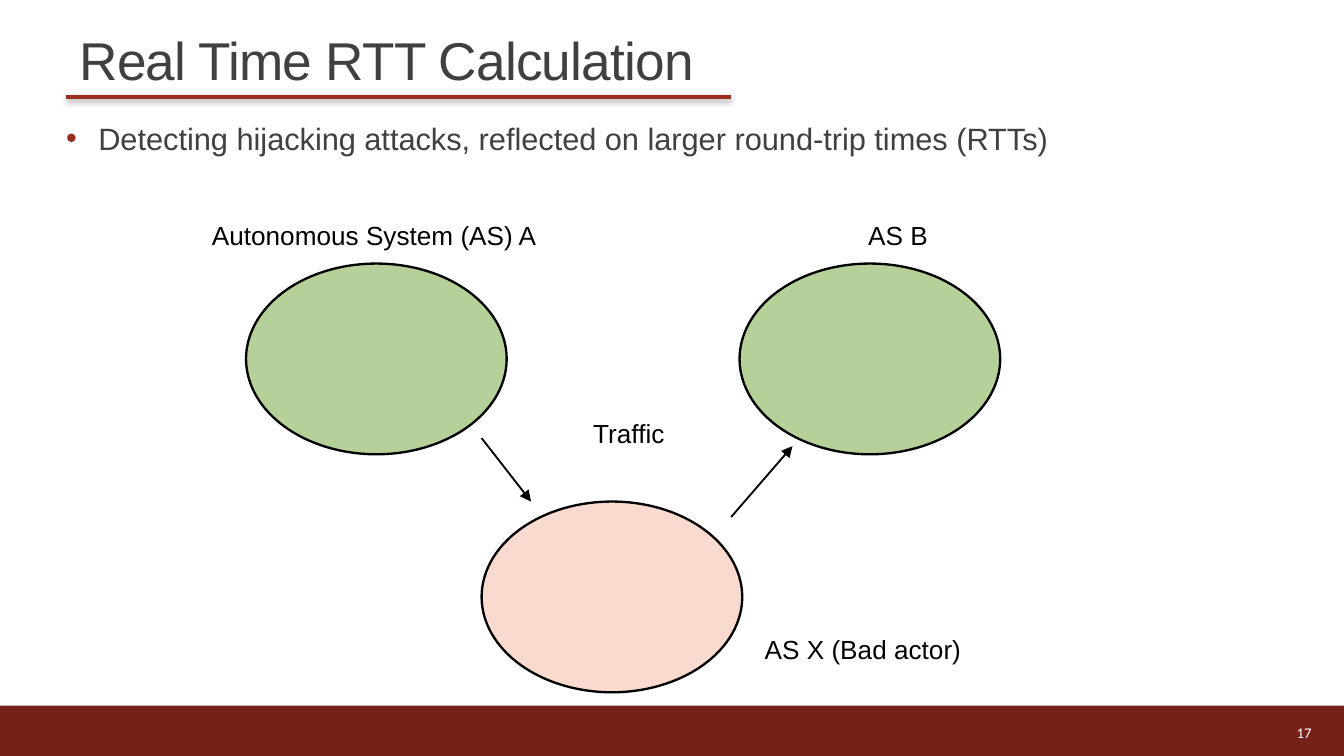
from lxml.etree import SubElement
from pptx import Presentation
from pptx.dml.color import RGBColor
from pptx.enum.shapes import MSO_CONNECTOR, MSO_SHAPE
from pptx.enum.text import MSO_ANCHOR, MSO_AUTO_SIZE, PP_ALIGN
from pptx.oxml.ns import qn
from pptx.util import Pt

BLACK, WHITE, GREY = "000000", "FFFFFF", "404040"
RED, DARK_RED = "9B2D1F", "742217"
GREEN, SALMON = "679E2A", "F4B39B"
ELLIPSE_WIDTH, ELLIPSE_HEIGHT = 139.6, 102.2


def colour(value):
    return RGBColor.from_string(value)


def add_element(parent, tag, **attributes):
    return SubElement(parent, qn(tag), attributes)


def write(frame, text, size=14, font="Arial", color=BLACK, align=PP_ALIGN.LEFT,
          anchor=MSO_ANCHOR.TOP, wrap=True, spacing=None, tracking=None):
    """Put one formatted paragraph in a text frame and return it."""
    frame.word_wrap = wrap
    frame.auto_size = MSO_AUTO_SIZE.NONE if wrap else MSO_AUTO_SIZE.SHAPE_TO_FIT_TEXT
    frame.vertical_anchor = anchor
    para = frame.paragraphs[0]
    para.alignment = align
    if spacing:
        para.line_spacing = spacing
    span = para.add_run()
    span.text = text
    span.font.size = Pt(size)
    span.font.name = font
    span.font.color.rgb = colour(color)
    if tracking:
        span._r.get_or_add_rPr().set("spc", str(round(tracking * 100)))
    return para


def add_text(page, text, left, top, width, height=24.2, **style):
    box = page.shapes.add_textbox(Pt(left), Pt(top), Pt(width), Pt(height))
    return box, write(box.text_frame, text, **style)


def add_bullet(para, indent, color):
    properties = para._p.get_or_add_pPr()
    properties.set("marL", str(Pt(indent)))
    properties.set("indent", str(-Pt(indent)))
    add_element(add_element(properties, "a:buClr"), "a:srgbClr", val=color)
    add_element(properties, "a:buFont", typeface="Arial")
    add_element(properties, "a:buChar", char="•")


def add_filled(page, kind, left, top, width, height, fill, opacity=None, outline=None):
    shape = page.shapes.add_shape(kind, Pt(left), Pt(top), Pt(width), Pt(height))
    shape.shadow.inherit = False
    shape.fill.solid()
    shape.fill.fore_color.rgb = colour(fill)
    if opacity:
        solid = shape._element.spPr.find(qn("a:solidFill"))
        add_element(solid[0], "a:alpha", val=str(opacity * 1000))
    if outline:
        shape.line.color.rgb = colour(BLACK)
        shape.line.width = Pt(outline)
    else:
        shape.line.fill.background()


def add_line(page, start, end, color=BLACK, width=1, arrow=False, shadow=False):
    line = page.shapes.add_connector(MSO_CONNECTOR.STRAIGHT, *map(Pt, start + end))
    line.line.color.rgb = colour(color)
    line.line.width = Pt(width)
    if arrow:
        add_element(line.line._get_or_add_ln(), "a:tailEnd", type="triangle")
    effects = add_element(line._element.spPr, "a:effectLst")
    if shadow:
        outer = add_element(effects, "a:outerShdw", blurRad=str(Pt(3.1)),
                            dist=str(Pt(1.6)), dir="5400000", rotWithShape="0")
        add_element(add_element(outer, "a:srgbClr", val=BLACK), "a:alpha", val="38000")


def add_heading(page):
    title = page.shapes.title
    title.left, title.top, title.width, title.height = map(Pt, (35.4, 0, 648.7, 52.6))
    write(title.text_frame, "Real Time RTT Calculation", size=28.5, color=GREY,
          anchor=MSO_ANCHOR.BOTTOM, spacing=0.85, tracking=-0.4)
    add_line(page, (35.4, 51.8), (391.7, 51.8), color=RED, width=2, shadow=True)


def add_body(page):
    box, para = add_text(
        page, "Detecting hijacking attacks, reflected on larger round-trip times (RTTs)",
        35.4, 60.5, 622.8, 283.7, size=16.5, color=GREY, align=PP_ALIGN.JUSTIFY)
    box.text_frame.margin_left = box.text_frame.margin_right = 0
    add_bullet(para, 17.3, RED)


def add_diagram(page):
    # Autonomous systems
    for left, top, fill in ((258, 268.7, SALMON), (131.8, 141.2, GREEN),
                            (396.2, 141.2, GREEN)):
        add_filled(page, MSO_SHAPE.OVAL, left, top, ELLIPSE_WIDTH, ELLIPSE_HEIGHT,
                   fill, opacity=48, outline=1.25)

    # Labels
    for text, left, top, width in (
            ("Autonomous System (AS) A", 106.4, 114, 190),
            ("AS B", 458, 114, 46.8),
            ("Traffic", 310.7, 219.9, 54),
            ("AS X (Bad actor)", 402.6, 335.9, 120.2)):
        add_text(page, text, left, top, width, wrap=False)

    # Route of the traffic
    add_line(page, (258, 234.7), (284.5, 268.7), arrow=True)
    add_line(page, (391.7, 277), (424.6, 239), arrow=True)


def main():
    deck = Presentation()
    deck.slide_width, deck.slide_height = Pt(720), Pt(405)
    page = deck.slides.add_slide(deck.slide_layouts[5])

    # Footer band with the page number
    add_filled(page, MSO_SHAPE.RECTANGLE, 0, 378, 720, 27, DARK_RED)
    add_text(page, "17", 632.2, 381.9, 77.6, 21.6, size=7.9, font="Calibri",
             color=WHITE, align=PP_ALIGN.RIGHT, anchor=MSO_ANCHOR.MIDDLE)

    add_heading(page)
    add_body(page)
    add_diagram(page)
    deck.save("out.pptx")


if __name__ == "__main__":
    main()
